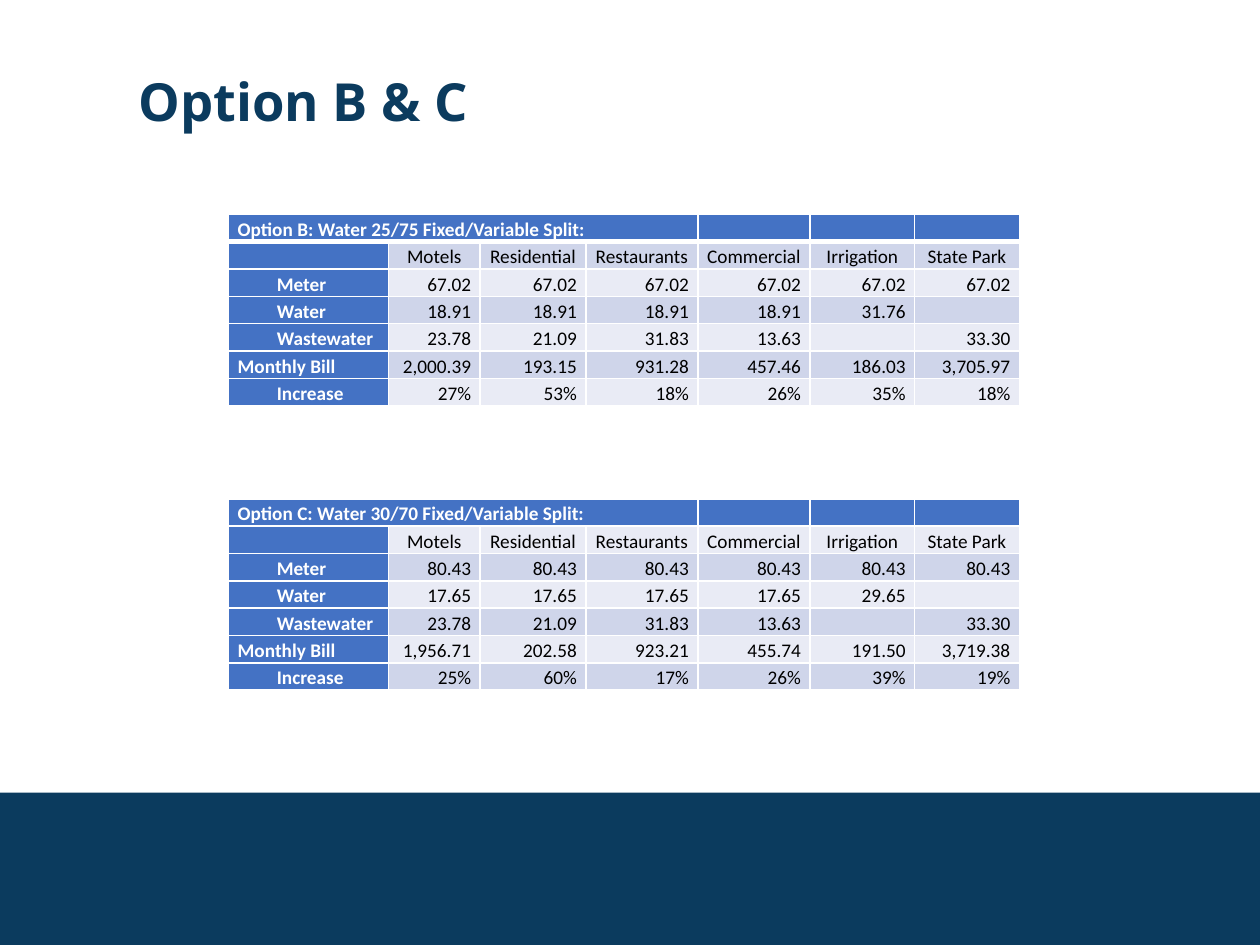
from dataclasses import dataclass

import lxml.etree
import pptx
import pptx.dml.color
import pptx.enum.shapes
import pptx.enum.text
import pptx.oxml.ns
import pptx.util

Cm = pptx.util.Cm
Pt = pptx.util.Pt
RGBColor = pptx.dml.color.RGBColor
Align = pptx.enum.text.PP_ALIGN
Anchor = pptx.enum.text.MSO_ANCHOR
qn = pptx.oxml.ns.qn

NAVY = RGBColor(0x0B, 0x3B, 0x5E)
BLUE = RGBColor(0x44, 0x72, 0xC4)
DARK_BAND = RGBColor(0xCF, 0xD5, 0xEA)
LIGHT_BAND = RGBColor(0xE9, 0xEB, 0xF5)
WHITE = RGBColor(0xFF, 0xFF, 0xFF)
BLACK = RGBColor(0x00, 0x00, 0x00)

COL_WIDTHS = [3.22, 1.85, 2.13, 2.26, 2.26, 2.11, 2.11]
ROW_HEIGHT = 0.53
GAP_HEIGHT = 0.94
GAP_ROWS = 2
TITLE_SPAN = 4
CUSTOMERS = ["Motels", "Residential", "Restaurants", "Commercial", "Irrigation", "State Park"]


@dataclass
class RateOption:
    title: str
    rows: dict[str, list[str]]
    bands: tuple[RGBColor, RGBColor]
    title_rule: float  # points, the line under the title row


OPTIONS = [
    RateOption("Option B: Water 25/75 Fixed/Variable Split:", {
        "Meter": ["67.02"] * 6,
        "Water": ["18.91"] * 4 + ["31.76", ""],
        "Wastewater": ["23.78", "21.09", "31.83", "13.63", "", "33.30"],
        "Monthly Bill": ["2,000.39", "193.15", "931.28", "457.46", "186.03", "3,705.97"],
        "Increase": ["27%", "53%", "18%", "26%", "35%", "18%"],
    }, (DARK_BAND, LIGHT_BAND), 3),
    RateOption("Option C: Water 30/70 Fixed/Variable Split:", {
        "Meter": ["80.43"] * 6,
        "Water": ["17.65"] * 4 + ["29.65", ""],
        "Wastewater": ["23.78", "21.09", "31.83", "13.63", "", "33.30"],
        "Monthly Bill": ["1,956.71", "202.58", "923.21", "455.74", "191.50", "3,719.38"],
        "Increase": ["25%", "60%", "17%", "26%", "39%", "19%"],
    }, (LIGHT_BAND, DARK_BAND), 1),
]
OPTION_ROWS = 2 + len(OPTIONS[0].rows)


def set_borders(cell, top: float = 1, bottom: float = 1) -> None:
    tc_pr = cell._tc.get_or_add_tcPr()
    for tag, width in (("a:lnL", 1), ("a:lnR", 1), ("a:lnT", top), ("a:lnB", bottom)):
        ln = lxml.etree.SubElement(tc_pr, qn(tag), w=str(Pt(width)))
        fill = lxml.etree.SubElement(ln, qn("a:solidFill"))
        lxml.etree.SubElement(fill, qn("a:srgbClr"), val=str(WHITE))


def format_cell(cell, fill: RGBColor | None, text: str = "", align=Align.LEFT,
                heading: bool = False, indent: float = 0,
                top: float = 1, bottom: float = 1) -> None:
    cell.margin_left = cell.margin_right = Cm(0.18)
    cell.margin_top = cell.margin_bottom = 0
    cell.vertical_anchor = Anchor.BOTTOM
    set_borders(cell, top, bottom)
    if fill is None:
        cell.fill.background()
    else:
        cell.fill.solid()
        cell.fill.fore_color.rgb = fill

    p = cell.text_frame.paragraphs[0]
    p.alignment = align
    p.line_spacing = 1.15
    p.space_after = Pt(8)
    if indent:
        p._p.get_or_add_pPr().set("indent", str(Cm(indent)))
    if text:
        r = p.add_run()
        r.text = text
        r.font.size = Pt(11)
        r.font.name = "Calibri"
        r.font.bold = heading
        r.font.color.rgb = WHITE if heading else BLACK
    else:
        # An empty cell keeps the row low only with a small end-of-paragraph size
        lxml.etree.SubElement(p._p, qn("a:endParaRPr"), sz="1100")


def draw_option(table, first: int, option: RateOption) -> None:
    # Title row
    rule = option.title_rule
    for c in range(len(COL_WIDTHS)):
        format_cell(table.cell(first, c), BLUE, option.title if c == 0 else "",
                    heading=True, bottom=rule)
    table.cell(first, 0).merge(table.cell(first, TITLE_SPAN - 1))

    # Customer names
    format_cell(table.cell(first + 1, 0), BLUE, top=rule)
    for c, name in enumerate(CUSTOMERS, 1):
        format_cell(table.cell(first + 1, c), option.bands[0], name, Align.CENTER, top=rule)

    # Charges
    for i, (label, values) in enumerate(option.rows.items(), 1):
        indent = 0 if label == "Monthly Bill" else 0.79
        format_cell(table.cell(first + 1 + i, 0), BLUE, label, heading=True, indent=indent)
        for c, value in enumerate(values, 1):
            format_cell(table.cell(first + 1 + i, c), option.bands[i % 2], value, Align.RIGHT)


def draw_table(s) -> None:
    row_count = len(OPTIONS) * OPTION_ROWS + GAP_ROWS
    gap = range(OPTION_ROWS, OPTION_ROWS + GAP_ROWS)
    heights = [GAP_HEIGHT if i in gap else ROW_HEIGHT for i in range(row_count)]
    table = s.shapes.add_table(row_count, len(COL_WIDTHS), Cm(4.61), Cm(4.32),
                               Cm(sum(COL_WIDTHS)), Cm(sum(heights))).table
    table.first_row = table.horz_banding = False
    for column, width in zip(table.columns, COL_WIDTHS):
        column.width = Cm(width)
    for row, height in zip(table.rows, heights):
        row.height = Cm(height)
    for i, option in enumerate(OPTIONS):
        draw_option(table, i * (OPTION_ROWS + GAP_ROWS), option)
    for i in gap:
        for cell in table.rows[i].cells:
            format_cell(cell, None)


def draw_title(s, text: str) -> None:
    sp = s.shapes.title
    sp.left, sp.top, sp.width, sp.height = Cm(2.54), Cm(1.27), Cm(20.32), Cm(2.57)
    tf = sp.text_frame
    tf.auto_size = pptx.enum.text.MSO_AUTO_SIZE.NONE
    tf.vertical_anchor = Anchor.TOP
    p = tf.paragraphs[0]
    p.alignment = Align.LEFT
    r = p.add_run()
    r.text = text
    r.font.size = Pt(30)
    r.font.name = "Open Sans"
    r.font.bold = True
    r.font.color.rgb = NAVY


def draw_footer_band(s) -> None:
    sp = s.shapes.add_shape(pptx.enum.shapes.MSO_SHAPE.RECTANGLE,
                            0, Cm(15.98), Cm(25.4), Cm(3.07))
    sp.shadow.inherit = False
    sp.fill.solid()
    sp.fill.fore_color.rgb = NAVY
    sp.line.fill.background()


def main() -> None:
    prs = pptx.Presentation()
    prs.slide_width, prs.slide_height = Cm(25.4), Cm(19.05)
    s = prs.slides.add_slide(prs.slide_layouts.get_by_name("Title Only"))
    draw_footer_band(s)
    draw_title(s, "Option B & C")
    draw_table(s)
    prs.save("out.pptx")


if __name__ == "__main__":
    main()
